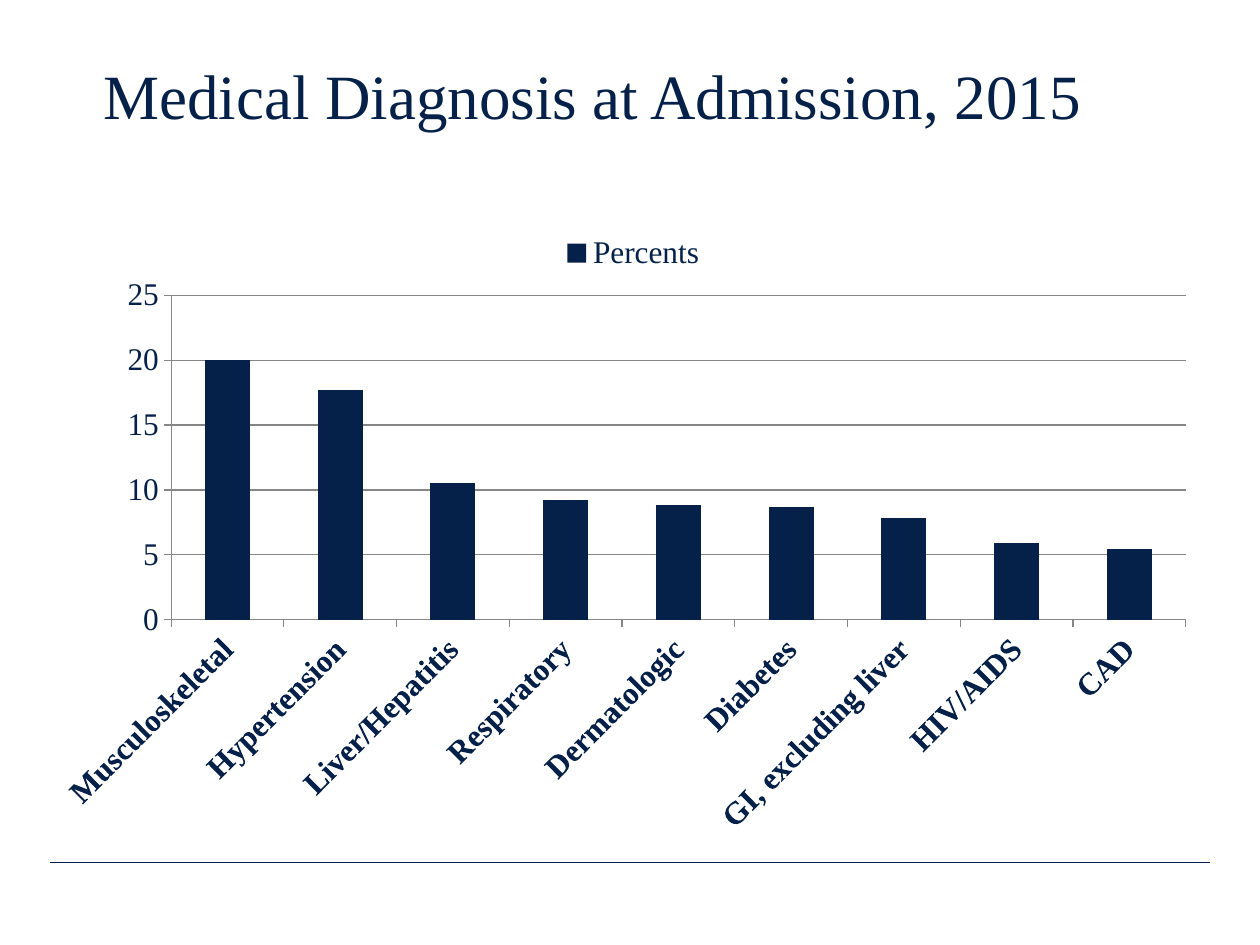
from pptx import Presentation
from pptx.chart.data import CategoryChartData
from pptx.dml.color import RGBColor
from pptx.enum.chart import XL_CHART_TYPE, XL_LEGEND_POSITION, XL_TICK_MARK
from pptx.enum.shapes import MSO_CONNECTOR
from pptx.enum.text import MSO_ANCHOR, MSO_AUTO_SIZE, PP_ALIGN
from pptx.oxml import parse_xml
from pptx.oxml.ns import nsdecls, qn
from pptx.util import Inches, Pt
from lxml import etree

NAVY = RGBColor(0x05, 0x20, 0x49)
GRAY = RGBColor(0x86, 0x86, 0x86)
FONT = "Times New Roman"
COLUMNS = XL_CHART_TYPE.COLUMN_CLUSTERED
LEGEND_TOP = XL_LEGEND_POSITION.TOP
TICK_OUT, TICK_NONE = XL_TICK_MARK.OUTSIDE, XL_TICK_MARK.NONE
STRAIGHT = MSO_CONNECTOR.STRAIGHT
BOTTOM, LEFT = MSO_ANCHOR.BOTTOM, PP_ALIGN.LEFT
NO_AUTOFIT = MSO_AUTO_SIZE.NONE

DIAGNOSES = {
    "Musculoskeletal": 20,
    "Hypertension": 17.7,
    "Liver/Hepatitis": 10.5,
    "Respiratory": 9.2,
    "Dermatologic": 8.8,
    "Diabetes": 8.7,
    "GI, excluding liver": 7.8,
    "HIV/AIDS": 5.9,
    "CAD": 5.4,
}
PLOT_AREA = {"x": 0.09, "y": 0.12, "w": 0.9, "h": 0.52}
LABEL_ANGLE = -45


def set_font(font, **values):
    for name, value in {"name": FONT, **values}.items():
        setattr(font, name, value)
    font.color.rgb = NAVY


def set_line(line, color, width):
    line.color.rgb = color
    line.width = Pt(width)


def add_title(slide, text, left, top, width, height):
    title = slide.shapes.title
    box = {"left": left, "top": top, "width": width, "height": height}
    for name, value in box.items():
        setattr(title, name, Inches(value))
    frame = title.text_frame
    layout = {"text": text, "word_wrap": True, "auto_size": NO_AUTOFIT,
              "vertical_anchor": BOTTOM}
    for name, value in layout.items():
        setattr(frame, name, value)
    paragraph = frame.paragraphs[0]
    paragraph.alignment = LEFT
    paragraph.line_spacing = 0.85
    set_font(paragraph.runs[0].font, size=Pt(36))


def fix_plot_area(chart, fractions):
    """Pin the inner plot area to fractions of the chart's box."""
    plot_area = chart.element.find(".//" + qn("c:plotArea"))
    for automatic in plot_area.findall(qn("c:layout")):
        plot_area.remove(automatic)
    layout = parse_xml(
        f'<c:layout {nsdecls("c")}><c:manualLayout>'
        '<c:layoutTarget val="inner"/><c:xMode val="edge"/><c:yMode val="edge"/>'
        + "".join(f'<c:{key} val="{value}"/>' for key, value in fractions.items())
        + "</c:manualLayout></c:layout>")
    plot_area.insert(0, layout)


def add_diagnosis_chart(slide, left, top, width, height):
    data = CategoryChartData()
    data.categories = list(DIAGNOSES)
    data.add_series("Percents", list(DIAGNOSES.values()))
    box = [Inches(value) for value in (left, top, width, height)]
    chart = slide.shapes.add_chart(COLUMNS, *box, data).chart
    set_font(chart.font, size=Pt(18))
    chart.has_title = False
    chart.has_legend = True
    chart.legend.position = LEGEND_TOP
    chart.legend.include_in_layout = False
    set_font(chart.legend.font, size=Pt(18))

    plot = chart.plots[0]
    plot.gap_width = 150
    plot.vary_by_categories = False
    fill = plot.series[0].format.fill
    fill.solid()
    fill.fore_color.rgb = NAVY

    diagnoses, percents = chart.category_axis, chart.value_axis
    for axis, bold in ((diagnoses, True), (percents, False)):
        axis.major_tick_mark = TICK_OUT
        axis.minor_tick_mark = TICK_NONE
        set_line(axis.format.line, GRAY, 0.75)
        set_font(axis.tick_labels.font, size=Pt(18), bold=bold)
    label_body = diagnoses._element.find(".//" + qn("a:bodyPr"))
    label_body.set("rot", str(LABEL_ANGLE * 60000))
    percents.minimum_scale, percents.maximum_scale = 0, 25
    percents.major_unit = 5
    percents.has_major_gridlines = True
    set_line(percents.major_gridlines.format.line, GRAY, 0.75)
    fix_plot_area(chart, PLOT_AREA)


def add_footer_rule(slide, left, top, width):
    rule = slide.shapes.add_connector(
        STRAIGHT, Inches(left), Inches(top), Inches(left + width), Inches(top))
    set_line(rule.line, NAVY, 0.25)
    etree.SubElement(rule._element.spPr, qn("a:effectLst"))


def main():
    deck = Presentation()
    deck.slide_width, deck.slide_height = Inches(10), Inches(7.5)
    slide = deck.slides.add_slide(deck.slide_layouts[5])
    add_footer_rule(slide, 0.4, 6.84, 9.2)
    add_title(slide, "Medical Diagnosis at Admission, 2015", 0.72, 0.48, 8.85, 0.62)
    add_diagnosis_chart(slide, 0.5, 1.75, 9, 4.95)
    deck.save("out.pptx")


if __name__ == "__main__":
    main()
